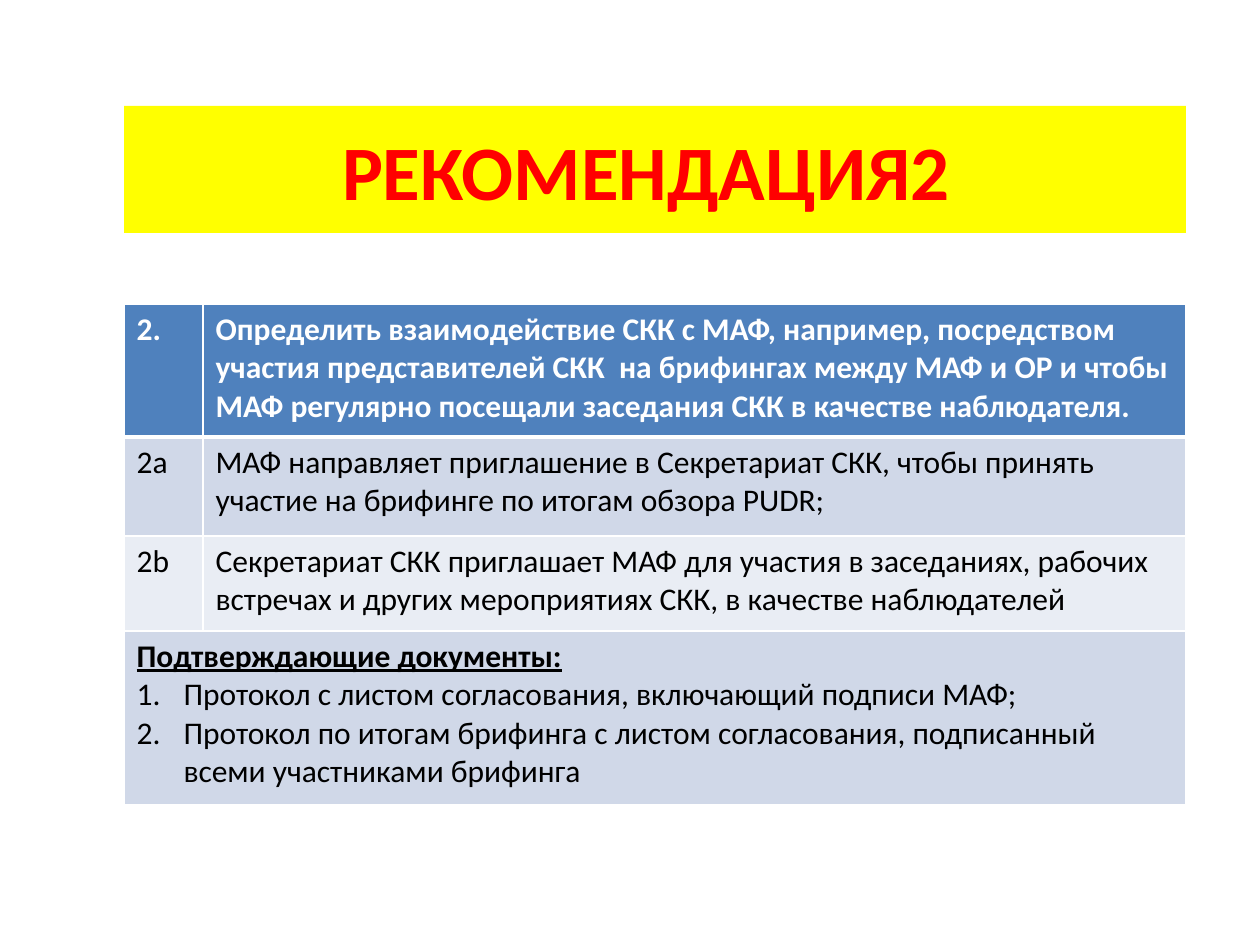
import dataclasses

import pptx
import pptx.dml.color
import pptx.enum.text
import pptx.oxml
import pptx.oxml.ns
import pptx.util

EMU_PER_PX = 914400 / 126


def px(length):
    return pptx.util.Emu(round(length * EMU_PER_PX))


def rgb(code):
    return pptx.dml.color.RGBColor.from_string(code)


@dataclasses.dataclass(frozen=True)
class Theme:
    font: str = "Calibri"
    title_size: int = 44
    body_size: int = 18
    title_fill: str = "FFFF00"
    title_text: str = "FF0000"
    header_fill: str = "4F81BD"
    header_text: str = "FFFFFF"
    body_text: str = "000000"
    band_dark: str = "D0D8E8"
    band_light: str = "E9EDF4"
    border: str = "FFFFFF"
    thin: int = 1
    thick: int = 3


class SlideBuilder:
    def __init__(self, page, theme):
        self.page = page
        self.theme = theme

    def span(self, para, text, size, color, bold=False, underline=False):
        run = para.add_run()
        run.text = text
        font = run.font
        font.name = self.theme.font
        font.size = pptx.util.Pt(size)
        font.bold = bold
        font.underline = underline
        font.color.rgb = rgb(color)

    def title(self, text, left, top, width, height):
        box = self.page.shapes.add_textbox(px(left), px(top), px(width), px(height))
        box.fill.solid()
        box.fill.fore_color.rgb = rgb(self.theme.title_fill)
        frame = box.text_frame
        frame.word_wrap = True
        frame.vertical_anchor = pptx.enum.text.MSO_ANCHOR.MIDDLE
        para = frame.paragraphs[0]
        para.alignment = pptx.enum.text.PP_ALIGN.CENTER
        self.span(para, text, self.theme.title_size, self.theme.title_text, bold=True)

    def table(self, left, top, widths, heights):
        frame = self.page.shapes.add_table(
            len(heights), len(widths), px(left), px(top), px(sum(widths)), px(sum(heights))
        )
        table = frame.table
        for column, width in zip(table.columns, widths):
            column.width = px(width)
        for row, height in zip(table.rows, heights):
            row.height = px(height)
        return table

    def cell_style(self, cell, fill, top_line, bottom_line):
        """Fill the cell and draw its four borders."""
        cell.fill.solid()
        cell.fill.fore_color.rgb = rgb(fill)
        properties = cell._tc.get_or_add_tcPr()
        thin = self.theme.thin
        sides = {"L": thin, "R": thin, "T": top_line, "B": bottom_line}
        for position, (side, points) in enumerate(sides.items()):
            line = pptx.oxml.parse_xml(
                f'<a:ln{side} {pptx.oxml.ns.nsdecls("a")} w="{pptx.util.Pt(points)}">'
                f'<a:solidFill><a:srgbClr val="{self.theme.border}"/></a:solidFill>'
                f"</a:ln{side}>"
            )
            properties.insert(position, line)

    def cell_text(self, cell, text, color, bold=False, underline=False):
        para = cell.text_frame.paragraphs[0]
        self.span(para, text, self.theme.body_size, color, bold, underline)

    def numbered(self, cell, text, indent):
        para = cell.text_frame.add_paragraph()
        properties = para._p.get_or_add_pPr()
        properties.set("marL", str(px(indent)))
        properties.set("indent", str(-px(indent)))
        properties.append(pptx.oxml.parse_xml(
            f'<a:buFont {pptx.oxml.ns.nsdecls("a")} typeface="+mj-lt"/>'
        ))
        properties.append(pptx.oxml.parse_xml(
            f'<a:buAutoNum {pptx.oxml.ns.nsdecls("a")} type="arabicPeriod"/>'
        ))
        self.span(para, text, self.theme.body_size, self.theme.body_text)


RECOMMENDATIONS = [
    ("2.", "Определить взаимодействие СКК с МАФ, например, посредством участия "
           "представителей СКК  на брифингах между МАФ и ОР и чтобы МАФ регулярно "
           "посещали заседания СКК в качестве наблюдателя."),
    ("2a", "МАФ направляет приглашение в Секретариат СКК, чтобы принять участие "
           "на брифинге по итогам обзора PUDR;"),
    ("2b", "Секретариат СКК приглашает МАФ для участия в заседаниях, рабочих "
           "встречах и других мероприятиях СКК, в качестве наблюдателей"),
]
DOCUMENTS = [
    "Протокол с листом согласования, включающий подписи МАФ;",
    "Протокол по итогам брифинга с листом согласования, подписанный всеми "
    "участниками брифинга",
]


def main():
    deck = pptx.Presentation()
    deck.slide_width = px(1260)
    deck.slide_height = px(945)
    theme = Theme()
    builder = SlideBuilder(deck.slides.add_slide(deck.slide_layouts[6]), theme)

    builder.title("РЕКОМЕНДАЦИЯ2 ", 124, 106, 1062, 127)

    table = builder.table(124, 304, widths=[79, 983], heights=[133, 99, 95, 174])
    fills = [theme.header_fill, theme.band_dark, theme.band_light, theme.band_dark]
    for index, (row, fill) in enumerate(zip(table.rows, fills)):
        top_line = theme.thick if index == 1 else theme.thin
        bottom_line = theme.thick if index == 0 else theme.thin
        for cell in row.cells:
            builder.cell_style(cell, fill, top_line, bottom_line)

    for index, texts in enumerate(RECOMMENDATIONS):
        is_header = index == 0
        color = theme.header_text if is_header else theme.body_text
        for column, text in enumerate(texts):
            builder.cell_text(table.cell(index, column), text, color, bold=is_header)

    documents = table.cell(3, 0)
    documents.merge(table.cell(3, 1))
    builder.cell_text(documents, "Подтверждающие документы:", theme.body_text,
                      bold=True, underline=True)
    for text in DOCUMENTS:
        builder.numbered(documents, text, indent=47)

    deck.save("out.pptx")


if __name__ == "__main__":
    main()
